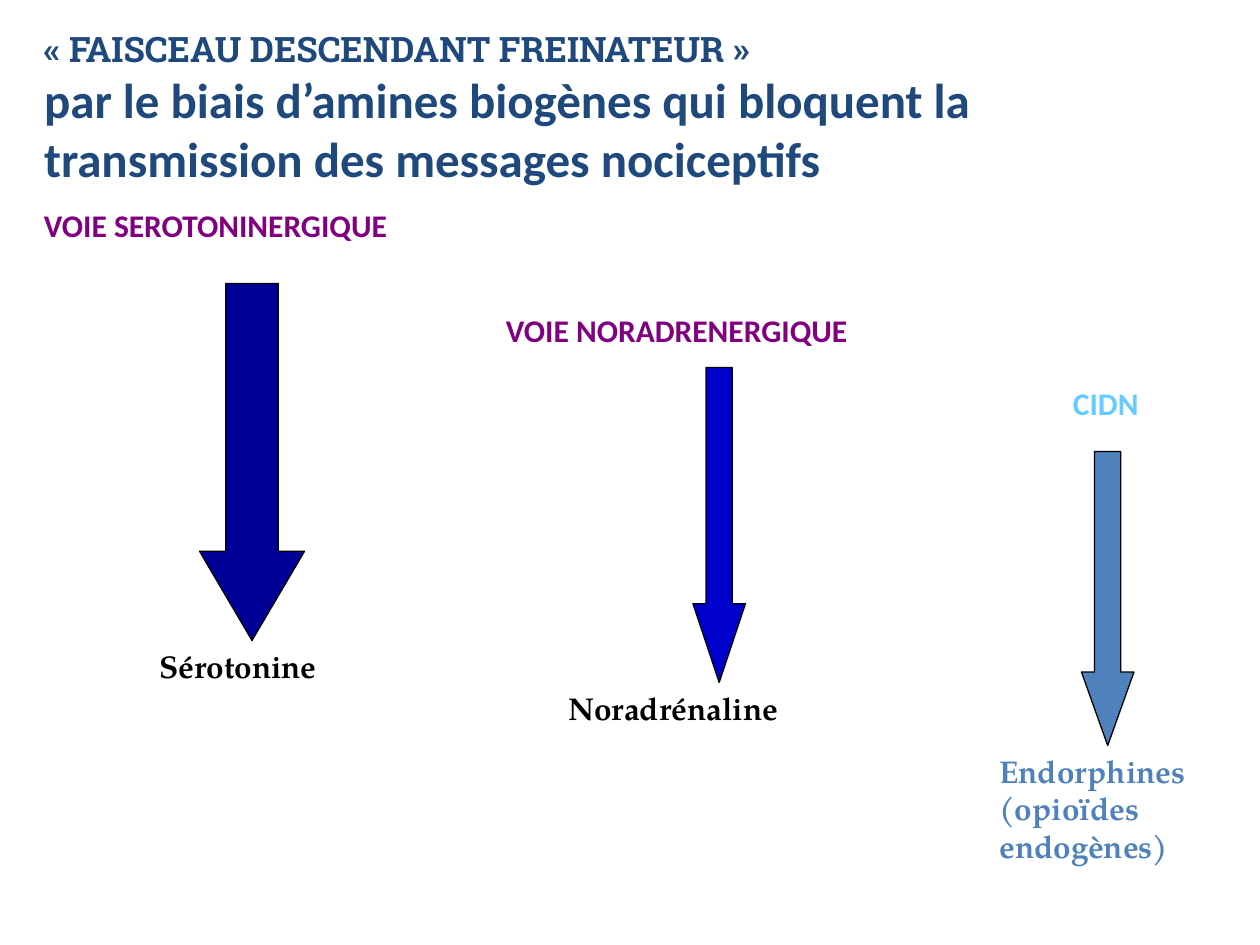
from pptx import Presentation
from pptx.dml.color import RGBColor
from pptx.enum.shapes import MSO_SHAPE
from pptx.enum.text import MSO_ANCHOR, MSO_AUTO_SIZE, PP_ALIGN
from pptx.util import Pt

DOWN_ARROW = MSO_SHAPE.DOWN_ARROW
TOP = MSO_ANCHOR.TOP
LEFT = PP_ALIGN.LEFT
NO_FIT = MSO_AUTO_SIZE.NONE
TITLE_ONLY = 5

SANS, SLAB, SERIF = "Calibri", "Roboto Slab", "TeX Gyre Pagella"
NAVY, PURPLE, SKY, STEEL, BLACK = "1F497D", "800080", "66CCFF", "4F81BD", "000000"


def rgb(hex_color):
    return RGBColor.from_string(hex_color)


class SlideBuilder:
    """Holds the shared style and the slide being filled."""

    frame_format = {"word_wrap": True, "auto_size": NO_FIT, "vertical_anchor": TOP}
    text_size = 18
    outline_width = 0.75
    head_share = 0.25  # arrowhead length as a share of the arrow

    def __init__(self, deck):
        self.slide = deck.slides.add_slide(deck.slide_layouts[TITLE_ONLY])

    def fill_text(self, frame, lines, color):
        """Fill a frame with (text, font, size) lines, one paragraph each."""
        for name, value in self.frame_format.items():
            setattr(frame, name, value)
        for i, (text, font, size) in enumerate(lines):
            paragraph = frame.add_paragraph() if i else frame.paragraphs[0]
            paragraph.alignment = LEFT
            run = paragraph.add_run()
            run.text = text
            for name, value in {"name": font, "size": Pt(size), "bold": True}.items():
                setattr(run.font, name, value)
            run.font.color.rgb = rgb(color)

    def title(self, box, lines, color):
        heading = self.slide.shapes.title
        for name, value in zip(("left", "top", "width", "height"), box):
            setattr(heading, name, Pt(value))
        self.fill_text(heading.text_frame, lines, color)

    def label(self, box, texts, font, color):
        caption = self.slide.shapes.add_textbox(*map(Pt, box))
        lines = [(text, font, self.text_size) for text in texts]
        self.fill_text(caption.text_frame, lines, color)

    def arrow(self, box, color):
        pathway = self.slide.shapes.add_shape(DOWN_ARROW, *map(Pt, box))
        width, height = box[2:]
        pathway.adjustments[0] = 0.5
        pathway.adjustments[1] = self.head_share * height / width
        pathway.shadow.inherit = False
        pathway.fill.solid()
        pathway.fill.fore_color.rgb = rgb(color)
        pathway.line.color.rgb = rgb(BLACK)
        pathway.line.width = Pt(self.outline_width)


# Pathway name and box, arrow box and fill, then the released substance,
# whose label starts at the arrow tip: (left, width, height)
PATHWAYS = [
    ("VOIE SEROTONINERGIQUE", (18, 114, 266, 29), PURPLE,
     (114, 162, 60, 204), "000099",
     ["Sérotonine"], (84, 153, 36), BLACK),
    ("VOIE NORADRENERGIQUE", (282, 174, 292, 29), PURPLE,
     (396, 210, 30, 180), "0000CC",
     ["Noradrénaline"], (318, 211, 36), BLACK),
    ("CIDN", (606, 216, 84, 29), SKY,
     (618, 258, 30, 168), STEEL,
     ["Endorphines", "(opioïdes endogènes)"], (564, 156, 94), STEEL),
]


def main():
    deck = Presentation()
    deck.slide_width, deck.slide_height = Pt(720), Pt(540)
    builder = SlideBuilder(deck)

    # Heading
    builder.title((18, 12, 690, 122), [
        ("« FAISCEAU DESCENDANT FREINATEUR »", SLAB, 20),
        ("par le biais d’amines biogènes qui bloquent la transmission "
         "des messages nociceptifs", SANS, 28),
    ], NAVY)

    # Descending pathways and their neurotransmitters
    for (pathway, name_box, name_color, arrow_box, arrow_color,
         substance, (left, width, height), substance_color) in PATHWAYS:
        builder.label(name_box, [pathway], SANS, name_color)
        builder.arrow(arrow_box, arrow_color)
        arrow_tip = arrow_box[1] + arrow_box[3]
        builder.label((left, arrow_tip, width, height), substance, SERIF, substance_color)

    deck.save("out.pptx")


if __name__ == "__main__":
    main()
